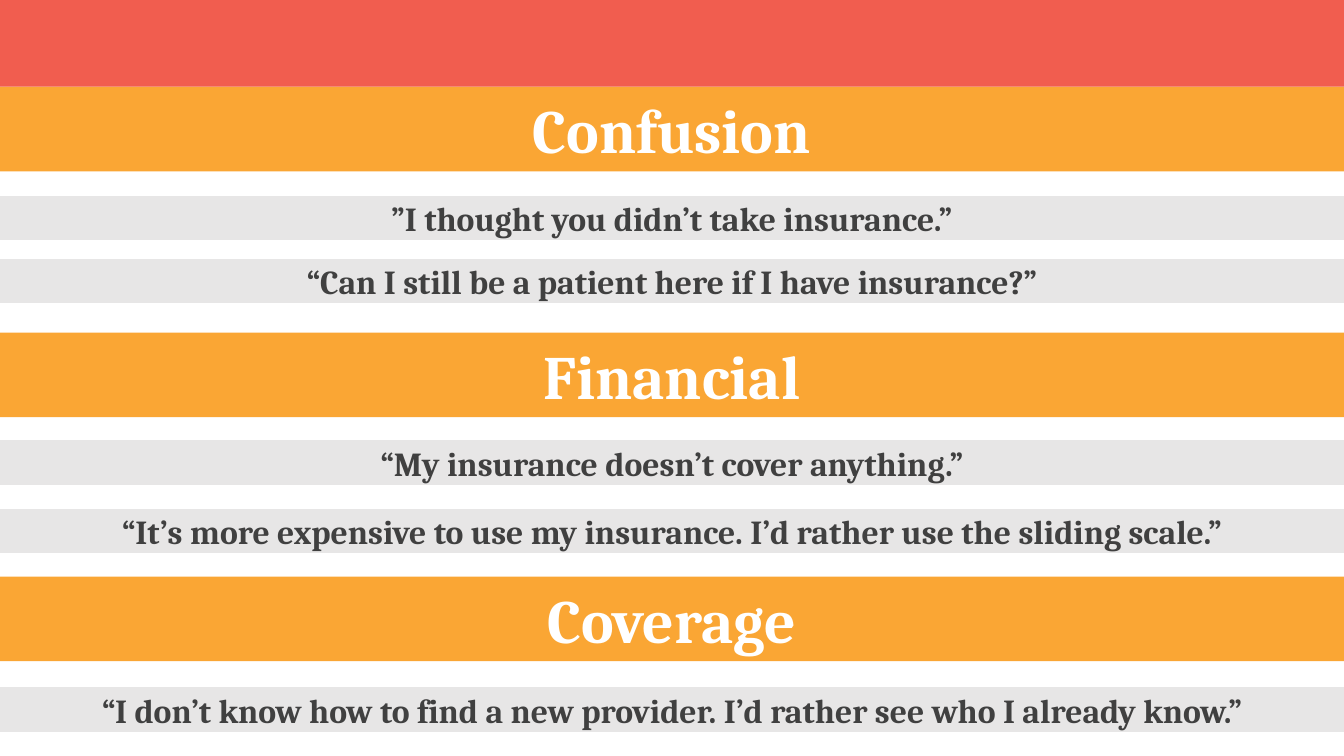
from pptx import Presentation
from pptx.dml.color import RGBColor
from pptx.enum.shapes import MSO_SHAPE
from pptx.enum.text import MSO_ANCHOR, MSO_AUTO_SIZE, PP_ALIGN
from pptx.util import Inches, Pt

WIDTH, HEIGHT = 13.33, 7.5
COLORS = {"red": "F15D4F", "orange": "FAA634", "grey": "E7E6E6",
          "white": "FFFFFF", "dark": "404040"}

# Each theme: heading, its top, and quotes with their tops
THEMES = [
    ("Confusion", 0.86, [
        ("”I thought you didn’t take insurance.”", 1.94),
        ("“Can I still be a patient here if I have insurance?”", 2.57)]),
    ("Financial", 3.3, [
        ("“My insurance doesn’t cover anything.”", 4.37),
        ("“It’s more expensive to use my insurance. "
         "I’d rather use the sliding scale.”", 5.05)]),
    ("Coverage", 5.72, [
        ("“I don’t know how to find a new provider. "
         "I’d rather see who I already know.”", 6.82)]),
]


class Deck:
    """Holds the style and the current slide."""
    font = "Cambria"

    def __init__(self):
        self.prs = Presentation()
        self.prs.slide_width = Inches(WIDTH)
        self.prs.slide_height = Inches(HEIGHT)
        self.slide = self.prs.slides.add_slide(self.prs.slide_layouts[5])

    def color(self, name):
        return RGBColor.from_string(COLORS[name])

    def paint(self, shape, fill):
        shape.fill.solid()
        shape.fill.fore_color.rgb = self.color(fill)
        shape.line.fill.background()

    def band(self, top, height, fill, kind=MSO_SHAPE.RECTANGLE):
        shape = self.slide.shapes.add_shape(
            kind, 0, Inches(top), Inches(WIDTH), Inches(height))
        shape.shadow.inherit = False
        self.paint(shape, fill)
        return shape

    def label(self, shape, text, size, color, anchor):
        frame = shape.text_frame
        frame.word_wrap = True
        frame.vertical_anchor = anchor
        para = frame.paragraphs[0]
        para.alignment = PP_ALIGN.CENTER
        run = para.add_run()
        run.text = text
        run.font.name = self.font
        run.font.size = Pt(size)
        run.font.bold = True
        run.font.color.rgb = self.color(color)

    def title(self, top, height, fill):
        shape = self.slide.shapes.title
        shape.left, shape.top = 0, Inches(top)
        shape.width, shape.height = Inches(WIDTH), Inches(height)
        self.paint(shape, fill)
        return shape

    def heading(self, text, top, first):
        make = self.title if first else self.band
        shape = make(top, 0.84, "orange")
        self.label(shape, text, 44, "white", MSO_ANCHOR.TOP)
        shape.text_frame.auto_size = MSO_AUTO_SIZE.SHAPE_TO_FIT_TEXT

    def quote(self, text, top):
        shape = self.band(top, 0.44, "grey", MSO_SHAPE.FLOWCHART_PROCESS)
        self.label(shape, text, 24, "dark", MSO_ANCHOR.MIDDLE)


def main():
    deck = Deck()

    # Top banner
    deck.band(0, 0.86, "red")

    # Headings with their quotes
    for index, (name, top, quotes) in enumerate(THEMES):
        deck.heading(name, top, first=index == 0)
        for text, place in quotes:
            deck.quote(text, place)

    deck.prs.save("out.pptx")


if __name__ == "__main__":
    main()
